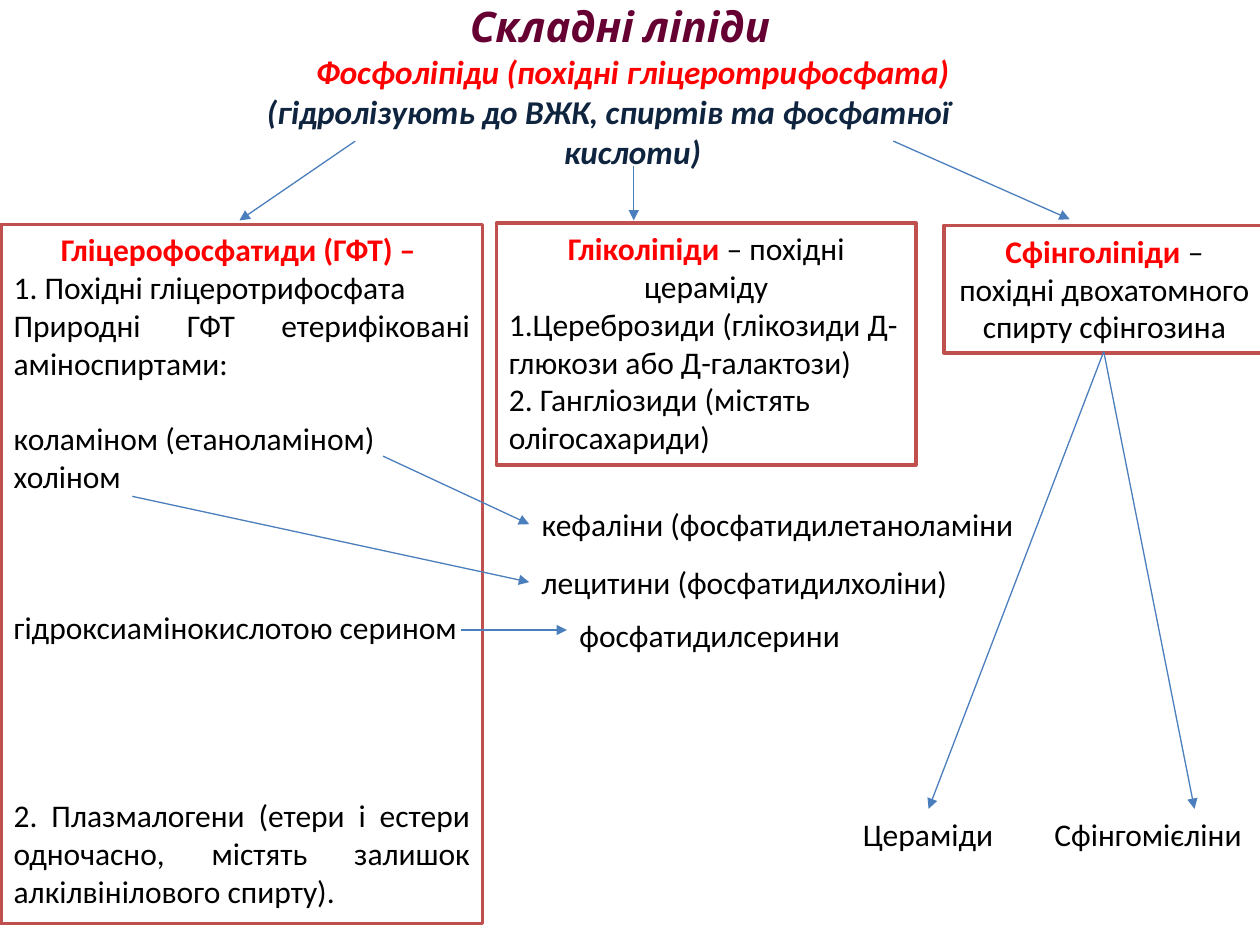
"""Build a slide that classifies complex lipids."""
import pptx
import pptx.dml.color
import pptx.enum.shapes
import pptx.enum.text
import pptx.oxml.ns
import pptx.util
from lxml import etree

WIDTH, HEIGHT = pptx.util.Inches(10), pptx.util.Inches(7.5)
ALIGN = pptx.enum.text.PP_ALIGN
ANCHOR = pptx.enum.text.MSO_ANCHOR
RED, BLACK, NAVY, PLUM = "FF0000", "000000", "0F243E", "660033"
WHITE, BORDER, ARROW = "FFFFFF", "C0504D", "4B7EBC"
LINE_POINTS = 21.5

BODY = {"name": "Calibri", "size": pptx.util.Pt(18), "bold": False, "color": BLACK}
TERM = {**BODY, "bold": True, "color": RED}
SUBTITLE = {**TERM, "size": pptx.util.Pt(19), "italic": True}
TITLE = {**SUBTITLE, "name": "Cabin", "size": pptx.util.Pt(24), "color": PLUM}

TITLE_PLACE = (4.2, -5.6, 90, 16.67)
TITLE_TEXT = [(ALIGN.CENTER, 0, [("Складні ліпіди", TITLE)])]
SUBTITLE_PLACE = (18.3, 4.8, 60, 14.13)
SUBTITLE_TEXT = [
    (ALIGN.CENTER, 0, [("Фосфоліпіди (похідні гліцеротрифосфата)", SUBTITLE)]),
    (ALIGN.CENTER, 0, [("(гідролізують до ВЖК, спиртів та фосфатної кислоти)",
                        {**SUBTITLE, "color": NAVY})]),
]
SUBTITLE_INDENTS = [0, -0.38]

CLASSES = [
    ((0.1, 23.73, 38.2, 74), [
        (ALIGN.CENTER, 0, [("Гліцерофосфатиди (ГФТ) – ", TERM)]),
        (ALIGN.JUSTIFY, 0, [("1. Похідні гліцеротрифосфата", BODY)]),
        (ALIGN.JUSTIFY, 0, [("Природні ГФТ етерифіковані аміноспиртами: ", BODY)]),
        (ALIGN.JUSTIFY, 1, [("коламіном (етаноламіном) ", BODY)]),
        (ALIGN.JUSTIFY, 0, [("холіном", BODY)]),
        (ALIGN.JUSTIFY, 3, [("гідроксиамінокислотою серином", BODY)]),
        (ALIGN.JUSTIFY, 4, [("2. Плазмалогени (етери і естери одночасно, "
                             "містять залишок алкілвінілового спирту).", BODY)]),
    ]),
    ((39.4, 23.6, 33.3, 25.6), [
        (ALIGN.CENTER, 0, [("Гліколіпіди", TERM), (" – похідні цераміду", BODY)]),
        (ALIGN.LEFT, 0, [("1.Цереброзиди (глікозиди Д-глюкози або Д-галактози)", BODY)]),
        (ALIGN.LEFT, 0, [("2. Гангліозиди (містять олігосахариди)", BODY)]),
    ]),
    ((74.9, 23.87, 25.5, 13.47), [
        (ALIGN.CENTER, 0, [("Сфінголіпіди", TERM),
                           (" – похідні двохатомного спирту сфінгозина", BODY)]),
    ]),
]
SPHINGOLIPID_FOOT = (87.6, 37.2)
SPHINGOLIPID_ROW = 85.6
PRODUCTS = [
    ("кефаліни (фосфатидилетаноламіни", 42, 52.8, 40),
    ("лецитини (фосфатидилхоліни)", 42, 58.93, 34.8),
    ("фосфатидилсерини", 45, 64.53, 22.9),
    ("Цераміди", 67.5, SPHINGOLIPID_ROW, 12.5),
    ("Сфінгомієліни", 82.7, SPHINGOLIPID_ROW, 17),
]
PRODUCT_HEIGHT = 5.33
ARROWS = [
    ((28.2, 14.93), (19, 23.33)),
    ((50.3, 17.6), (50.3, 23.33)),
    ((70.9, 14.93), (84.9, 23.2)),
    ((30.4, 48.27), (42, 55.47)),
    ((10.5, 52.53), (42, 61.6)),
    ((36.6, 66.67), (45, 66.67)),
    (SPHINGOLIPID_FOOT, (73.7, SPHINGOLIPID_ROW)),
    (SPHINGOLIPID_FOOT, (94.8, SPHINGOLIPID_ROW)),
]


def rgb(value):
    """Turn a hex string into a colour."""
    return pptx.dml.color.RGBColor.from_string(value)


def emu(*shares):
    """Turn alternating horizontal and vertical percentages into lengths."""
    return [round(share * (WIDTH, HEIGHT)[index % 2] / 100)
            for index, share in enumerate(shares)]


def write(frame, paragraphs, anchor=ANCHOR.TOP, wrap=True):
    """Fill a text frame with formatted paragraphs."""
    frame.word_wrap, frame.vertical_anchor = wrap, anchor
    for index, (alignment, free_lines, runs) in enumerate(paragraphs):
        paragraph = frame.add_paragraph() if index else frame.paragraphs[0]
        paragraph.alignment = alignment
        paragraph.space_before = pptx.util.Pt(free_lines * LINE_POINTS)
        for text, style in runs:
            run = paragraph.add_run()
            run.text = text
            for name, value in style.items():
                if name == "color":
                    run.font.color.rgb = rgb(value)
                else:
                    setattr(run.font, name, value)


def add_title(slide):
    """Place and fill the title placeholder."""
    title = slide.shapes.title
    names = ("left", "top", "width", "height")
    for name, value in zip(names, emu(*TITLE_PLACE)):
        setattr(title, name, value)
    write(title.text_frame, TITLE_TEXT, ANCHOR.MIDDLE)


def add_subtitle(slide):
    """Add the centred subtitle with its hanging indent."""
    frame = slide.shapes.add_textbox(*emu(*SUBTITLE_PLACE)).text_frame
    write(frame, SUBTITLE_TEXT)
    for paragraph, indent in zip(frame.paragraphs, SUBTITLE_INDENTS):
        properties = paragraph._p.get_or_add_pPr()
        properties.set("marL", str(pptx.util.Inches(0.38)))
        properties.set("indent", str(pptx.util.Inches(indent)))


def add_class(slide, place, paragraphs):
    """Add one bordered box for a lipid class."""
    kind = pptx.enum.shapes.MSO_SHAPE.RECTANGLE
    shape = slide.shapes.add_shape(kind, *emu(*place))
    shape.shadow.inherit = False
    shape.fill.solid()
    shape.fill.fore_color.rgb = rgb(WHITE)
    shape.line.color.rgb = rgb(BORDER)
    shape.line.width = pptx.util.Pt(2)
    write(shape.text_frame, paragraphs)


def add_arrow(slide, start, end):
    """Add a thin straight arrow."""
    kind = pptx.enum.shapes.MSO_CONNECTOR.STRAIGHT
    arrow = slide.shapes.add_connector(kind, *emu(*start, *end))
    arrow.line.color.rgb = rgb(ARROW)
    arrow.line.width = pptx.util.Pt(0.75)
    qualified = pptx.oxml.ns.qn
    etree.SubElement(arrow.line._get_or_add_ln(), qualified("a:tailEnd"), type="triangle")
    etree.SubElement(arrow._element.spPr, qualified("a:effectLst"))


def main():
    """Build and save the presentation."""
    presentation = pptx.Presentation()
    presentation.slide_width, presentation.slide_height = WIDTH, HEIGHT
    slide = presentation.slides.add_slide(presentation.slide_layouts[5])
    add_title(slide)
    add_subtitle(slide)
    for place, paragraphs in CLASSES:
        add_class(slide, place, paragraphs)
    for text, left, top, width in PRODUCTS:
        box = slide.shapes.add_textbox(*emu(left, top, width, PRODUCT_HEIGHT))
        write(box.text_frame, [(ALIGN.LEFT, 0, [(text, BODY)])], wrap=False)
    for start, end in ARROWS:
        add_arrow(slide, start, end)
    presentation.save("out.pptx")


if __name__ == "__main__":
    main()
